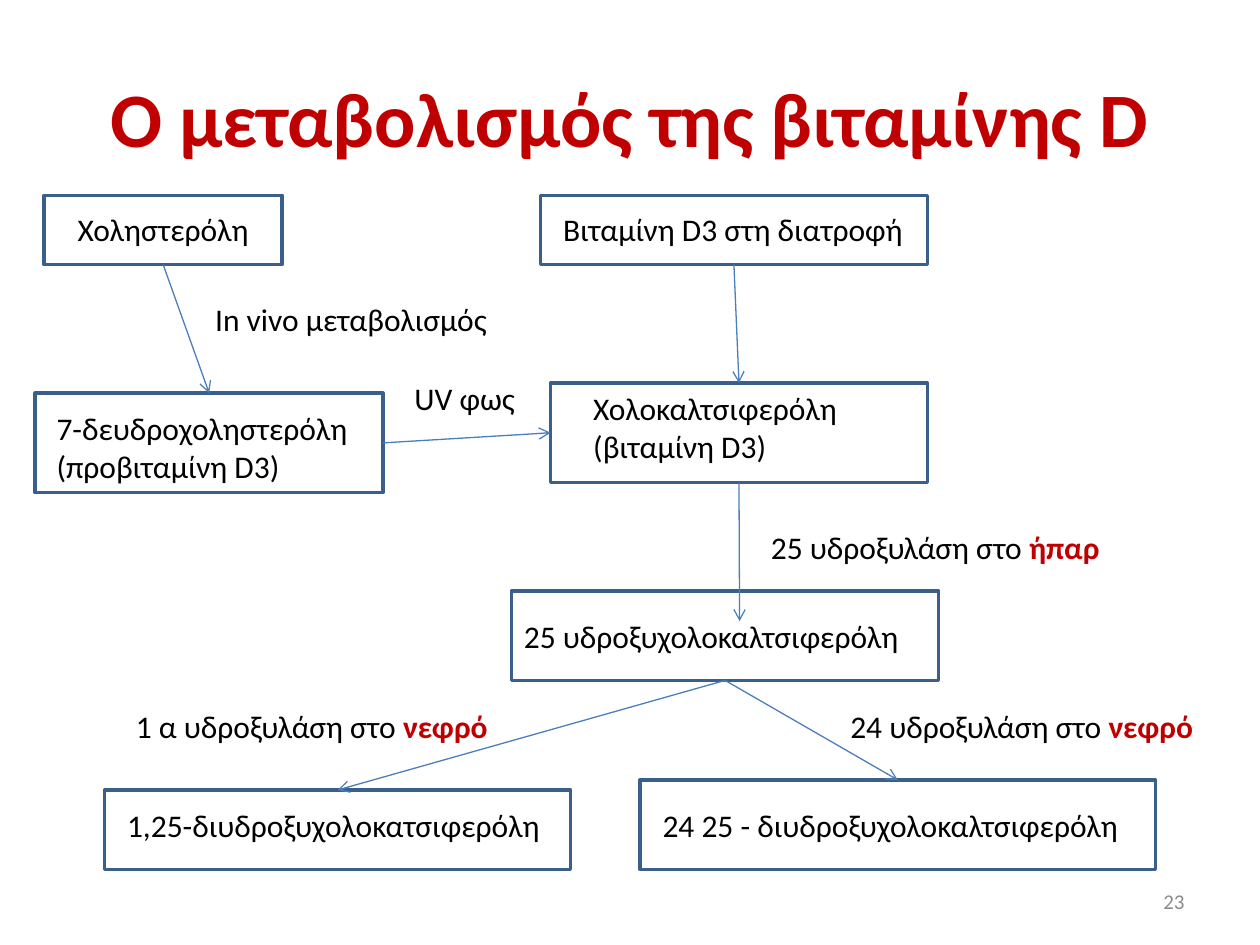
from typing import NamedTuple, Optional

from lxml import etree
from pptx import Presentation
from pptx.dml.color import RGBColor
from pptx.enum import shapes, text
from pptx.oxml import ns
from pptx.util import Pt

PX = 9144  # 100 px to the inch
FONT = "Calibri"
BLACK, RED, GREY = "000000", "C00000", "8C8C8C"
EDGE, ARROW = "3A5F8C", "4B7EBC"
TOP, LEFT, BASE, RIGHT = range(4)  # connection sites of a rectangle
ALIGN, ANCHOR = text.PP_ALIGN, text.MSO_ANCHOR


class Run(NamedTuple):
    words: str
    color: str = BLACK
    bold: bool = False
    size: int = 18


class Label(NamedTuple):
    x: int
    y: int
    w: int
    h: int
    lines: list[list[Run]]
    align: ALIGN = ALIGN.LEFT
    anchor: ANCHOR = ANCHOR.TOP


class Box(NamedTuple):
    name: str
    x: int
    y: int
    w: int
    h: int


class Link(NamedTuple):
    start: str
    out: int
    end: Optional[str] = None
    into: int = TOP
    tip: tuple[int, int] = (0, 0)  # free end, used without an end box


BOXES = [
    Box("cholesterol", 35, 155, 189, 55),
    Box("diet", 429, 155, 307, 55),
    Box("provitamin", 28, 312, 276, 79),
    Box("vitamin", 437, 304, 299, 79),
    Box("hydroxy", 406, 469, 339, 71),
    Box("one_25", 83, 627, 370, 63),
    Box("24_25", 508, 619, 409, 71),
]

LINKS = [
    Link("diet", BASE, "vitamin"),
    Link("cholesterol", BASE, "provitamin"),
    Link("provitamin", RIGHT, "vitamin", LEFT),
    Link("vitamin", BASE, tip=(587, 493)),
    Link("hydroxy", BASE, "one_25"),
    Link("hydroxy", BASE, "24_25"),
]


def plain(words: str) -> list[list[Run]]:
    return [[Run(words)]]


def enzyme(words: str, organ: str) -> list[list[Run]]:
    return [[Run(words), Run(organ, RED, True)]]


LABELS = [
    # Title and page number
    Label(50, 30, 900, 125, [[Run("Ο μεταβολισμός της βιταμίνης D", RED, True, 44)]],
          ALIGN.CENTER, ANCHOR.MIDDLE),
    Label(717, 695, 233, 40, [[Run("23", GREY, size=12)]],
          ALIGN.RIGHT, ANCHOR.MIDDLE),
    # Compounds
    Label(43, 162, 173, 40, plain("Χοληστερόλη"), ALIGN.CENTER),
    Label(437, 162, 339, 40, plain("Βιταμίνη D3 στη διατροφή")),
    Label(35, 320, 291, 71, plain("7-δευδροχοληστερόλη (προβιταμίνη D3)")),
    Label(461, 304, 222, 71, plain("Χολοκαλτσιφερόλη") + plain("(βιταμίνη D3)")),
    Label(406, 485, 339, 40, plain("25 υδροξυχολοκαλτσιφερόλη")),
    Label(91, 635, 378, 40, plain("1,25-διυδροξυχολοκατσιφερόλη")),
    Label(516, 635, 441, 40, plain("24 25 - διυδροξυχολοκαλτσιφερόλη")),
    # Reactions
    Label(161, 233, 244, 40, plain("In vivo μεταβολισμός")),
    Label(319, 296, 118, 40, plain("UV φως")),
    Label(602, 414, 315, 40, enzyme("25 υδροξυλάση στο ", "ήπαρ")),
    Label(98, 556, 315, 40, enzyme("1 α υδροξυλάση στο ", "νεφρό")),
    Label(665, 556, 315, 40, enzyme("24 υδροξυλάση στο ", "νεφρό")),
]


def paint(color, code: str) -> None:
    color.rgb = RGBColor.from_string(code)


def draw_box(slide, box: Box):
    rect = slide.shapes.add_shape(shapes.MSO_SHAPE.RECTANGLE,
                                  *(v * PX for v in box[1:]))
    rect.shadow.inherit = False
    rect.fill.background()
    paint(rect.line.color, EDGE)
    rect.line.width = Pt(2)
    return rect


def draw_link(slide, link: Link, rects: dict) -> None:
    x, y = (v * PX for v in link.tip)
    line = slide.shapes.add_connector(shapes.MSO_CONNECTOR.STRAIGHT, x, y, x, y)
    line.begin_connect(rects[link.start], link.out)
    if link.end:
        line.end_connect(rects[link.end], link.into)
    paint(line.line.color, ARROW)
    line.line.width = Pt(0.75)
    # Open arrowhead, no shadow
    etree.SubElement(line.line._get_or_add_ln(), ns.qn("a:tailEnd"), type="arrow")
    etree.SubElement(line._element.spPr, ns.qn("a:effectLst"))


def draw_label(slide, label: Label) -> None:
    area = slide.shapes.add_textbox(*(v * PX for v in label[:4]))
    frame = area.text_frame
    frame.word_wrap = True
    frame.vertical_anchor = label.anchor
    for i, line in enumerate(label.lines):
        para = frame.add_paragraph() if i else frame.paragraphs[0]
        para.alignment = label.align
        for item in line:
            run = para.add_run()
            run.text = item.words
            run.font.name = FONT
            run.font.size = Pt(item.size)
            run.font.bold = item.bold
            paint(run.font.color, item.color)


def main() -> None:
    deck = Presentation()
    deck.slide_width, deck.slide_height = 1000 * PX, 750 * PX
    slide = deck.slides.add_slide(deck.slide_layouts[6])
    rects = {box.name: draw_box(slide, box) for box in BOXES}
    for link in LINKS:
        draw_link(slide, link, rects)
    for label in LABELS:
        draw_label(slide, label)
    deck.save("out.pptx")


if __name__ == "__main__":
    main()
